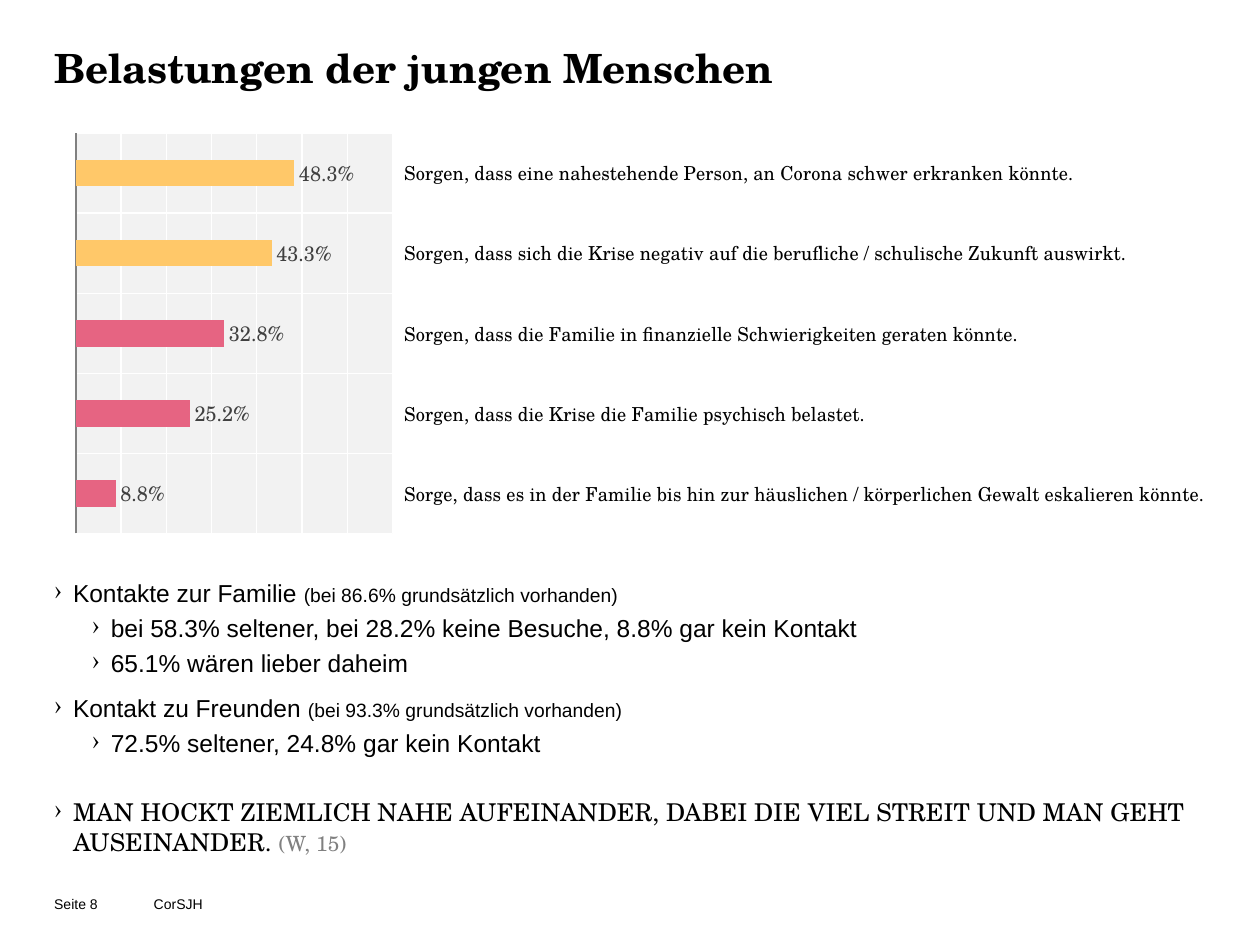
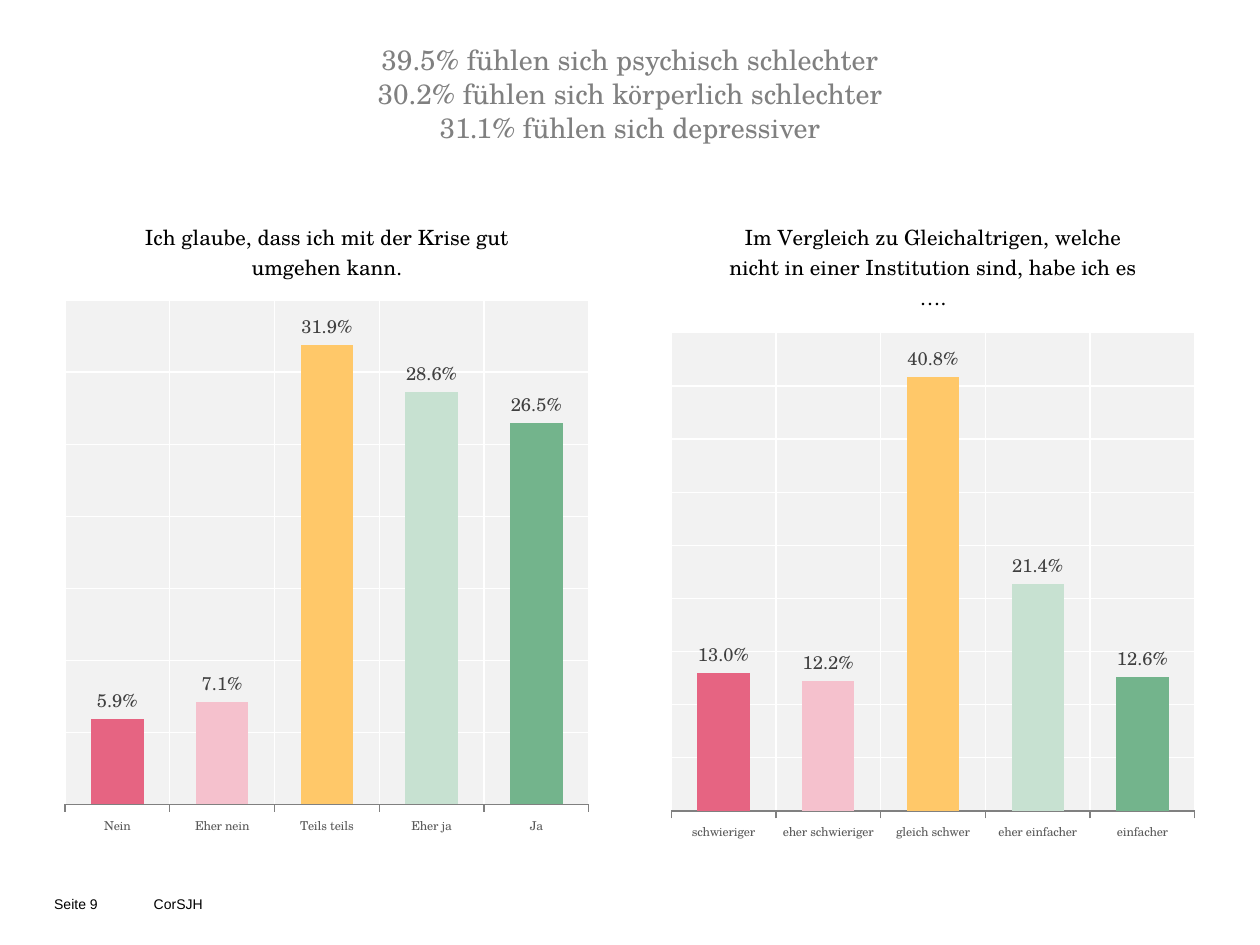
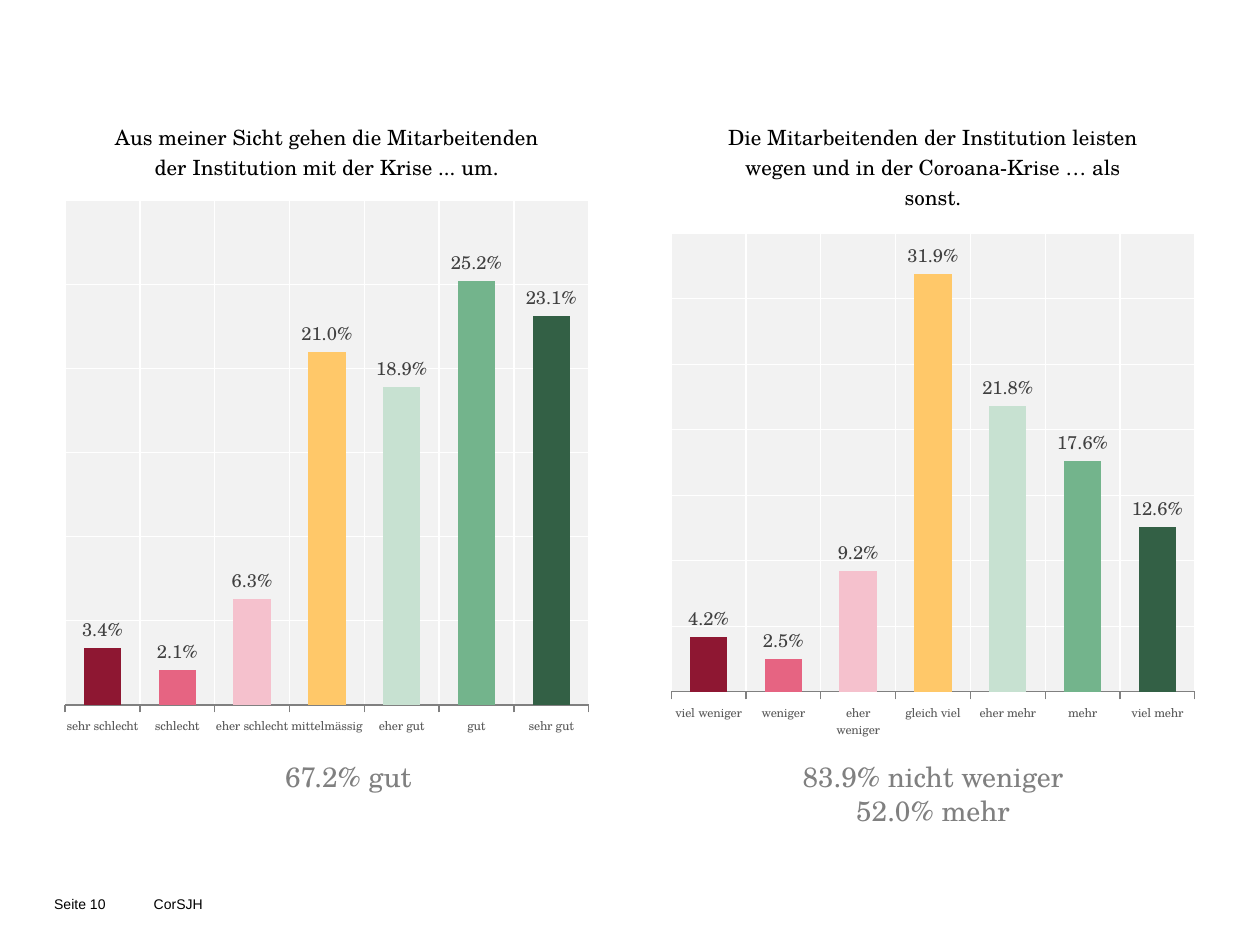
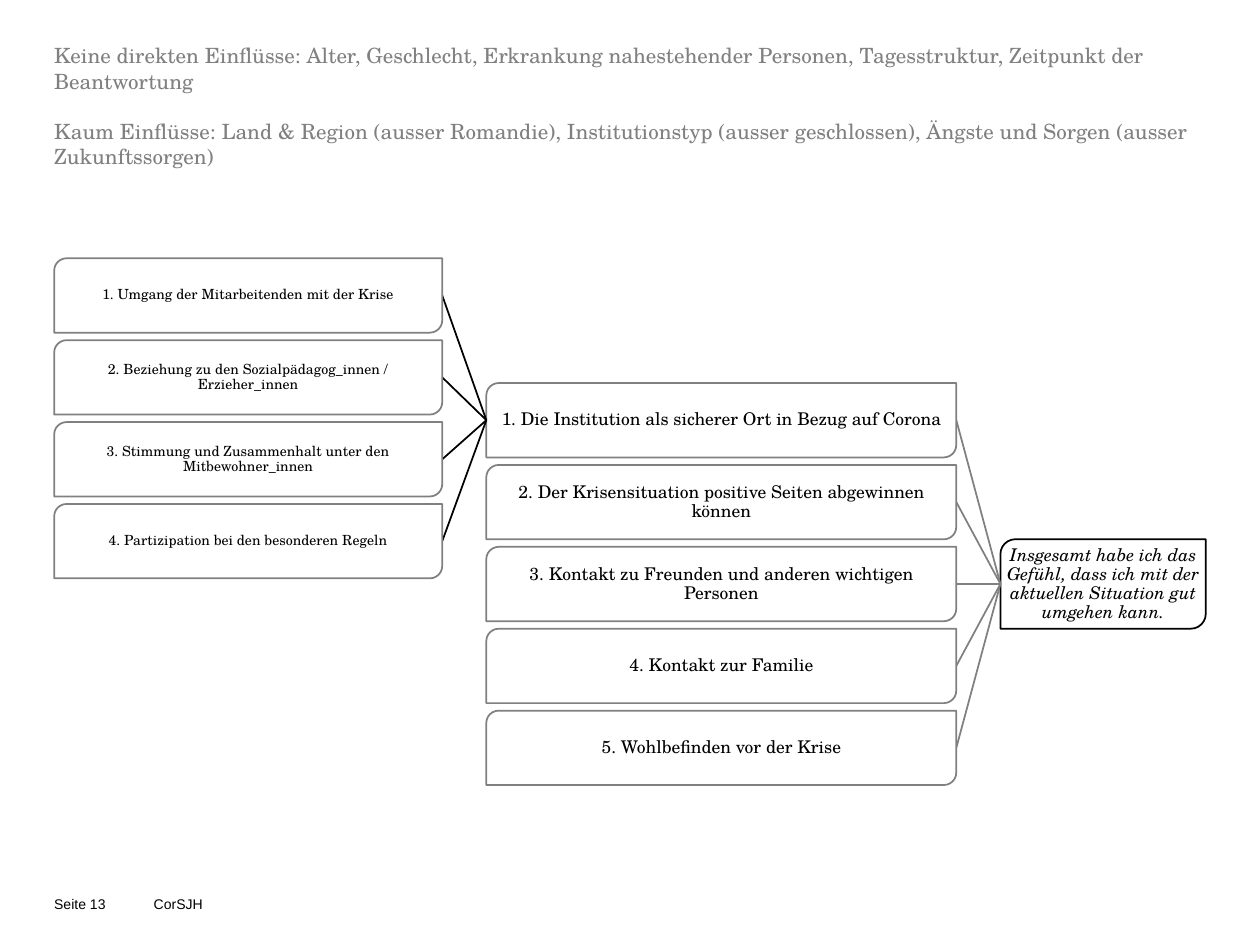
"""Build four slides on how young people in care experienced the pandemic."""
import dataclasses
import typing

import lxml.etree
import pptx
import pptx.chart.chart
import pptx.chart.data
import pptx.dml.color
import pptx.enum.chart
import pptx.enum.shapes
import pptx.enum.text
import pptx.oxml.ns
import pptx.presentation
import pptx.shapes.autoshape
import pptx.slide
import pptx.text.text
import pptx.util

Inches = pptx.util.Inches
Pt = pptx.util.Pt
RGBColor = pptx.dml.color.RGBColor
Align = pptx.enum.text.PP_ALIGN
Anchor = pptx.enum.text.MSO_ANCHOR
qn = pptx.oxml.ns.qn

BLACK = RGBColor(0x00, 0x00, 0x00)
WHITE = RGBColor(0xFF, 0xFF, 0xFF)
GRAY = RGBColor(0x80, 0x80, 0x80)
LABEL_GRAY = RGBColor(0x40, 0x40, 0x40)
AXIS_GRAY = RGBColor(0x59, 0x59, 0x59)
PLOT_GRAY = RGBColor(0xF2, 0xF2, 0xF2)
WINE = RGBColor(0x8E, 0x17, 0x32)
PINK = RGBColor(0xE6, 0x64, 0x82)
ROSE = RGBColor(0xF5, 0xC1, 0xCD)
YELLOW = RGBColor(0xFF, 0xC8, 0x69)
MINT = RGBColor(0xC7, 0xE1, 0xD1)
GREEN = RGBColor(0x73, 0xB4, 0x8C)
FOREST = RGBColor(0x33, 0x60, 0x45)
FIVE_STEPS = (PINK, ROSE, YELLOW, MINT, GREEN)
SEVEN_STEPS = (WINE, *FIVE_STEPS, FOREST)

SERIF = "TeX Gyre Schola"
SANS = "Arial"
PERCENT = "0.0%"
LEFT = 0.43
RIGHT_CHART_LEFT = 5.24
BOX_HEIGHT = 0.59
BOX_STEP = 0.65


@dataclasses.dataclass(frozen=True)
class Box:
    """A rectangle in inches."""

    left: float
    top: float
    width: float
    height: float

    @property
    def middle(self) -> float:
        """Return the height of the horizontal centre line."""
        return self.top + self.height / 2

    @property
    def right(self) -> float:
        """Return the right edge."""
        return self.left + self.width

    def lengths(self) -> tuple[pptx.util.Length, ...]:
        """Return the rectangle as slide lengths."""
        return tuple(Inches(value) for value in dataclasses.astuple(self))


@dataclasses.dataclass(frozen=True)
class Run:
    """A piece of text in one style."""

    text: str
    size: float
    font: str = SERIF
    color: RGBColor = BLACK
    bold: bool = False
    italic: bool = False


@dataclasses.dataclass(frozen=True)
class Bullet:
    """A list entry with its level and spacing in points."""

    runs: tuple[Run, ...]
    level: int = 0
    before: float = 3
    after: float = 0


@dataclasses.dataclass(frozen=True)
class BarChart:
    """A bar chart with one colour for each category; the plot is in fractions."""

    box: Box
    plot: Box
    categories: tuple[str, ...]
    values: tuple[float, ...]
    colors: tuple[RGBColor, ...]
    title: str = ""
    horizontal: bool = False


@dataclasses.dataclass(frozen=True)
class BoxColumn:
    """A stack of factors that all lead to one target."""

    left: float
    top: float
    width: float
    size: float
    texts: tuple[str, ...]
    line: RGBColor

    def boxes(self) -> list[Box]:
        """Return the evenly spaced rectangles."""
        return [Box(self.left, self.top + BOX_STEP * index, self.width, BOX_HEIGHT)
                for index in range(len(self.texts))]


TITLE_BOX = Box(LEFT, 0.34, 9.14, 0.98)

WORRIES = BarChart(
    Box(LEFT, 0.99, 9.14, 3.31), Box(0.02, 0.02, 0.29, 0.96),
    ("Sorgen, dass eine nahestehende Person, an Corona schwer erkranken könnte.",
     "Sorgen, dass sich die Krise negativ auf die berufliche / schulische Zukunft auswirkt.",
     "Sorgen, dass die Familie in finanzielle Schwierigkeiten geraten könnte.",
     "Sorgen, dass die Krise die Familie psychisch belastet.",
     "Sorge, dass es in der Familie bis hin zur häuslichen / körperlichen Gewalt eskalieren könnte."),
    (0.483, 0.433, 0.328, 0.252, 0.088),
    (YELLOW, YELLOW, PINK, PINK, PINK), horizontal=True)

COPING = BarChart(
    Box(LEFT, 1.55, 4.33, 5.2), Box(0.02, 0.16, 0.96, 0.77),
    ("Nein", "Eher nein", "Teils teils", "Eher ja", "Ja"),
    (0.059, 0.071, 0.319, 0.286, 0.265), FIVE_STEPS,
    "Ich glaube, dass ich mit der Krise gut umgehen kann.")

COMPARISON = BarChart(
    Box(RIGHT_CHART_LEFT, 1.55, 4.33, 5.2), Box(0.02, 0.21, 0.96, 0.73),
    ("schwieriger", "eher schwieriger", "gleich schwer", "eher einfacher", "einfacher"),
    (0.13, 0.122, 0.408, 0.214, 0.126), FIVE_STEPS,
    "Im Vergleich zu Gleichaltrigen, welche nicht in einer Institution sind, habe ich es ….")

STAFF_HANDLING = BarChart(
    Box(LEFT, 0.76, 4.33, 5.2), Box(0.02, 0.16, 0.96, 0.77),
    ("sehr schlecht", "schlecht", "eher schlecht", "mittelmässig", "eher gut", "gut", "sehr gut"),
    (0.034, 0.021, 0.063, 0.21, 0.189, 0.252, 0.231), SEVEN_STEPS,
    "Aus meiner Sicht gehen die Mitarbeitenden der Institution mit der Krise ... um.")

STAFF_EFFORT = BarChart(
    Box(RIGHT_CHART_LEFT, 0.76, 4.33, 5.2), Box(0.02, 0.21, 0.96, 0.7),
    ("viel weniger", "weniger", "eher weniger", "gleich viel", "eher mehr", "mehr", "viel mehr"),
    (0.042, 0.025, 0.092, 0.319, 0.218, 0.176, 0.126), SEVEN_STEPS,
    "Die Mitarbeitenden der Institution leisten wegen und in der Coroana-Krise … als sonst.")

CONTACTS = (
    Bullet((Run("Kontakte zur Familie ", 14, SANS),
            Run("(bei 86.6% grundsätzlich vorhanden)", 11, SANS)), before=0),
    Bullet((Run("bei 58.3% seltener, bei 28.2% keine Besuche, 8.8% gar kein Kontakt", 14, SANS),), 1),
    Bullet((Run("65.1% wären lieber daheim", 14, SANS),), 1, after=6),
    Bullet((Run("Kontakt zu Freunden ", 14, SANS),
            Run("(bei 93.3% grundsätzlich vorhanden)", 11, SANS))),
    Bullet((Run("72.5% seltener, 24.8% gar kein Kontakt", 14, SANS),), 1, after=6),
    Bullet((Run("MAN HOCKT ZIEMLICH NAHE AUFEINANDER, DABEI DIE VIEL STREIT "
                "UND MAN GEHT AUSEINANDER. ", 14),
            Run("(W, 15)", 12, color=GRAY)), before=17),
)

INSTITUTION_FACTORS = BoxColumn(
    LEFT, 2.05, 3.08, 8,
    ("1. Umgang der Mitarbeitenden mit der Krise",
     "2. Beziehung zu den Sozialpädagog_innen / Erzieher_innen",
     "3. Stimmung und Zusammenhalt unter den Mitbewohner_innen",
     "4. Partizipation bei den besonderen Regeln"), BLACK)

COPING_FACTORS = BoxColumn(
    3.86, 3.04, 3.73, 10,
    ("1. Die Institution als sicherer Ort in Bezug auf Corona",
     "2. Der Krisensituation positive Seiten abgewinnen können",
     "3. Kontakt zu Freunden und anderen wichtigen Personen",
     "4. Kontakt zur Familie",
     "5. Wohlbefinden vor der Krise"), GRAY)

OUTCOME_BOX = Box(7.94, 4.28, 1.63, 0.71)


def add_run(paragraph: typing.Any, run: Run) -> None:
    """Append one styled run to a paragraph."""
    text_run = paragraph.add_run()
    text_run.text = run.text
    font = text_run.font
    font.name, font.size = run.font, Pt(run.size)
    font.bold, font.italic = run.bold, run.italic
    font.color.rgb = run.color


def set_frame(frame: pptx.text.text.TextFrame, margin: float, anchor: Anchor) -> None:
    """Set wrapping, margins and anchor of a text frame."""
    frame.word_wrap = True
    frame.vertical_anchor = anchor
    frame.margin_left = frame.margin_right = Inches(margin)
    frame.margin_top = frame.margin_bottom = Inches(margin)


def add_text(slide: pptx.slide.Slide, box: Box, lines: typing.Sequence[Run],
             align: Align = Align.LEFT, anchor: Anchor = Anchor.TOP, gap: float = 0) -> None:
    """Add a text box with one paragraph a line and a gap between them."""
    frame = slide.shapes.add_textbox(*box.lengths()).text_frame
    set_frame(frame, 0, anchor)
    for index, line in enumerate(lines):
        paragraph = frame.add_paragraph() if index else frame.paragraphs[0]
        paragraph.alignment = align
        paragraph.space_before = Pt(gap if index else 0)
        add_run(paragraph, line)


def add_key_figures(slide: pptx.slide.Slide, box: Box, *lines: str) -> None:
    """Add centred gray statements."""
    add_text(slide, box, [Run(line, 16, color=GRAY) for line in lines], Align.CENTER)


def add_bullets(slide: pptx.slide.Slide, box: Box, bullets: typing.Sequence[Bullet]) -> None:
    """Add a two-level bullet list."""
    frame = slide.shapes.add_textbox(*box.lengths()).text_frame
    set_frame(frame, 0, Anchor.TOP)
    for index, bullet in enumerate(bullets):
        paragraph = frame.add_paragraph() if index else frame.paragraphs[0]
        paragraph.level = bullet.level
        properties = paragraph._p.get_or_add_pPr()
        properties.set("marL", str(Inches(0.15 + 0.3 * bullet.level)))
        properties.set("indent", str(Inches(-0.15)))
        lxml.etree.SubElement(properties, qn("a:buChar"), char="›")
        paragraph.space_before = Pt(bullet.before)
        paragraph.space_after = Pt(bullet.after)
        for run in bullet.runs:
            add_run(paragraph, run)


def format_plot_area(chart: pptx.chart.chart.Chart, plot: Box) -> None:
    """Place the inner plot area and fill it gray."""
    area = chart._chartSpace.find(".//" + qn("c:plotArea"))
    for layout in area.findall(qn("c:layout")):
        area.remove(layout)
    layout = lxml.etree.Element(qn("c:layout"))
    area.insert(0, layout)
    manual = lxml.etree.SubElement(layout, qn("c:manualLayout"))
    settings = {"layoutTarget": "inner", "xMode": "edge", "yMode": "edge",
                "x": plot.left, "y": plot.top, "w": plot.width, "h": plot.height}
    for name, value in settings.items():
        lxml.etree.SubElement(manual, qn(f"c:{name}"), val=str(value))
    properties = lxml.etree.SubElement(area, qn("c:spPr"))
    fill = lxml.etree.SubElement(properties, qn("a:solidFill"))
    lxml.etree.SubElement(fill, qn("a:srgbClr"), val=str(PLOT_GRAY))


def format_axes(chart: pptx.chart.chart.Chart, horizontal: bool) -> None:
    """Style the category axis and both grids, and hide the value axis."""
    category_axis, value_axis = chart.category_axis, chart.value_axis
    for axis in (category_axis, value_axis):
        axis.has_major_gridlines = True
        axis.major_gridlines.format.line.color.rgb = WHITE
        axis.major_gridlines.format.line.width = Pt(0.75)
    value_axis.visible = False
    value_axis.tick_labels.number_format = PERCENT
    value_axis.tick_labels.number_format_is_linked = False
    category_axis.format.line.color.rgb = GRAY
    category_axis.format.line.width = Pt(1.5 if horizontal else 0.75)
    font = category_axis.tick_labels.font
    font.name, font.size = SERIF, Pt(11 if horizontal else 7)
    font.color.rgb = BLACK if horizontal else AXIS_GRAY
    tick_marks = pptx.enum.chart.XL_TICK_MARK
    category_axis.major_tick_mark = tick_marks.NONE if horizontal else tick_marks.OUTSIDE
    if horizontal:
        category_axis.reverse_order = True
        category_axis.tick_label_position = pptx.enum.chart.XL_TICK_LABEL_POSITION.HIGH
        value_axis.minimum_scale, value_axis.maximum_scale = 0, 0.7
        value_axis.major_unit = 0.1


def add_bar_chart(slide: pptx.slide.Slide, spec_chart: BarChart) -> None:
    """Add a bar or column chart with coloured points and value labels."""
    horizontal = spec_chart.horizontal
    data = pptx.chart.data.CategoryChartData(number_format=PERCENT)
    data.categories = spec_chart.categories
    data.add_series("Series 1", spec_chart.values)
    types = pptx.enum.chart.XL_CHART_TYPE
    kind = types.BAR_CLUSTERED if horizontal else types.COLUMN_CLUSTERED
    chart = slide.shapes.add_chart(kind, *spec_chart.box.lengths(), data).chart
    chart.has_legend = False
    chart.font.name, chart.font.size = SERIF, Pt(10 if horizontal else 10.5)
    chart.font.color.rgb = BLACK
    chart.has_title = bool(spec_chart.title)
    if spec_chart.title:
        add_run(chart.chart_title.text_frame.paragraphs[0], Run(spec_chart.title, 12))
    format_axes(chart, horizontal)
    format_plot_area(chart, spec_chart.plot)

    plot = chart.plots[0]
    plot.vary_by_categories = False
    plot.gap_width = 200 if horizontal else 100
    plot.overlap = -30 if horizontal else 0
    series = plot.series[0]
    for index, color in enumerate(spec_chart.colors):
        fill = series.points[index].format.fill
        fill.solid()
        fill.fore_color.rgb = color
    labels = series.data_labels
    labels.show_value = True
    labels.position = pptx.enum.chart.XL_LABEL_POSITION.OUTSIDE_END
    labels.number_format, labels.number_format_is_linked = PERCENT, False
    labels.font.name, labels.font.size = SERIF, Pt(12 if horizontal else 10.5)
    labels.font.color.rgb = LABEL_GRAY


def add_factor(slide: pptx.slide.Slide, box: Box, run: Run, line: RGBColor) -> None:
    """Add a box with two rounded corners and centred text."""
    shape = slide.shapes.add_shape(
        pptx.enum.shapes.MSO_SHAPE.ROUND_2_DIAG_RECTANGLE, *box.lengths())
    shape.shadow.inherit = False
    shape.fill.solid()
    shape.fill.fore_color.rgb = WHITE
    shape.line.color.rgb = line
    shape.line.width = Pt(1)
    set_frame(shape.text_frame, 0.01, Anchor.MIDDLE)
    paragraph = shape.text_frame.paragraphs[0]
    paragraph.alignment = Align.CENTER
    paragraph.line_spacing = 0.9
    add_run(paragraph, run)


def add_link(slide: pptx.slide.Slide, target: Box, source: Box, color: RGBColor) -> None:
    """Join the left side of a target to the right side of a source."""
    connector = slide.shapes.add_connector(
        pptx.enum.shapes.MSO_CONNECTOR.STRAIGHT,
        Inches(target.left), Inches(target.middle),
        Inches(source.right), Inches(source.middle))
    connector.line.color.rgb = color
    connector.line.width = Pt(1)
    lxml.etree.SubElement(connector._element.spPr, qn("a:effectLst"))


def add_box_column(slide: pptx.slide.Slide, column: BoxColumn, target: Box) -> None:
    """Add a stack of factors with their links to the target."""
    for box, text in zip(column.boxes(), column.texts):
        add_link(slide, target, box, column.line)
        add_factor(slide, box, Run(text, column.size), GRAY)


def add_page(presentation: pptx.presentation.Presentation, number: int) -> pptx.slide.Slide:
    """Add a blank slide with the shared footer."""
    slide = presentation.slides.add_slide(presentation.slide_layouts[6])
    for left, width, text in ((LEFT, 0.63, f"Seite {number}"), (1.22, 3.09, "CorSJH")):
        add_text(slide, Box(left, 7.02, width, 0.31), [Run(text, 8, SANS)], anchor=Anchor.MIDDLE)
    return slide


def build_worries(presentation: pptx.presentation.Presentation) -> None:
    """Build the slide on worries and contacts."""
    slide = add_page(presentation, 8)
    add_text(slide, TITLE_BOX, [Run("Belastungen der jungen Menschen", 23, bold=True)])
    add_bar_chart(slide, WORRIES)
    add_bullets(slide, Box(LEFT, 4.59, 9.14, 2.16), CONTACTS)


def build_wellbeing(presentation: pptx.presentation.Presentation) -> None:
    """Build the slide on wellbeing and coping."""
    slide = add_page(presentation, 9)
    add_key_figures(slide, TITLE_BOX, "39.5% fühlen sich psychisch schlechter",
                    "30.2% fühlen sich körperlich schlechter", "31.1% fühlen sich depressiver")
    add_bar_chart(slide, COPING)
    add_bar_chart(slide, COMPARISON)


def build_staff(presentation: pptx.presentation.Presentation) -> None:
    """Build the slide on how the staff is seen."""
    slide = add_page(presentation, 10)
    add_bar_chart(slide, STAFF_HANDLING)
    add_bar_chart(slide, STAFF_EFFORT)
    add_key_figures(slide, Box(0.48, 6.03, 4.57, 0.59), "67.2% gut")
    add_key_figures(slide, Box(5.12, 6.03, 4.57, 0.59), "83.9% nicht weniger", "52.0% mehr")


def build_influences(presentation: pptx.presentation.Presentation) -> None:
    """Build the slide on the factors behind coping."""
    slide = add_page(presentation, 13)
    statements = (
        "Keine direkten Einflüsse: Alter, Geschlecht, Erkrankung nahestehender Personen, "
        "Tagesstruktur, Zeitpunkt der Beantwortung",
        "Kaum Einflüsse: Land & Region (ausser Romandie), Institutionstyp (ausser geschlossen), "
        "Ängste und Sorgen (ausser Zukunftssorgen)")
    add_text(slide, TITLE_BOX, [Run(text, 12, color=GRAY) for text in statements], gap=14.4)
    outcome = Run("Insgesamt habe ich das Gefühl, dass ich mit der aktuellen Situation "
                  "gut umgehen kann.", 10, italic=True)
    add_factor(slide, OUTCOME_BOX, outcome, BLACK)
    add_box_column(slide, COPING_FACTORS, OUTCOME_BOX)
    add_box_column(slide, INSTITUTION_FACTORS, COPING_FACTORS.boxes()[0])


def main() -> None:
    """Build and save the presentation."""
    presentation = pptx.Presentation()
    presentation.slide_width, presentation.slide_height = Inches(10), Inches(7.5)
    for build in (build_worries, build_wellbeing, build_staff, build_influences):
        build(presentation)
    presentation.save("out.pptx")


if __name__ == "__main__":
    main()
